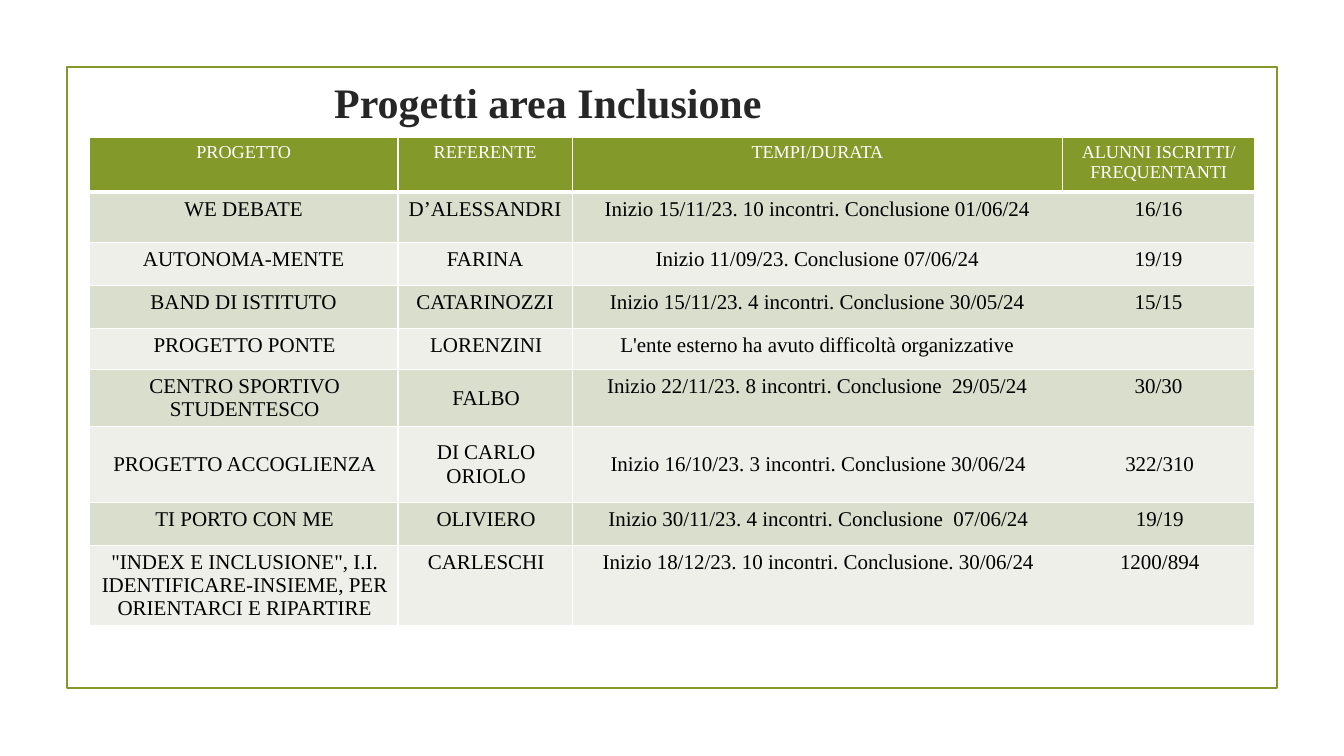
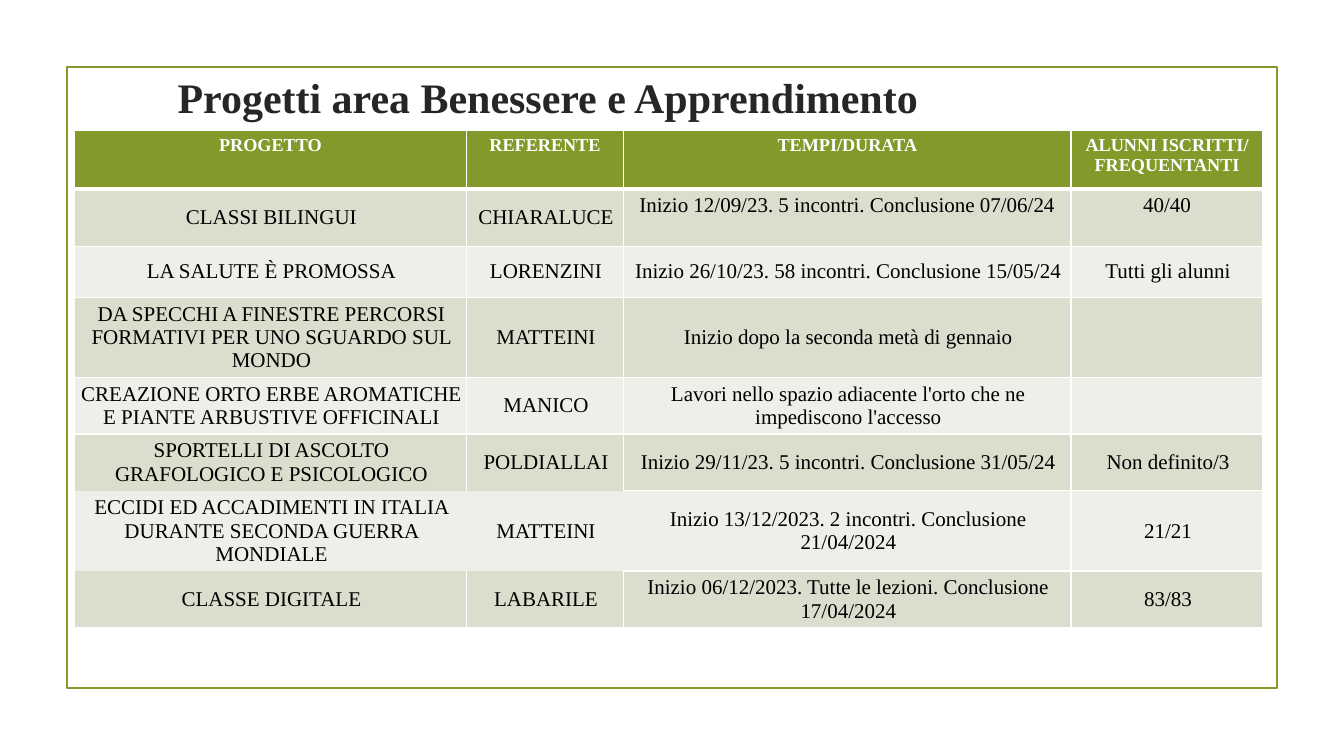
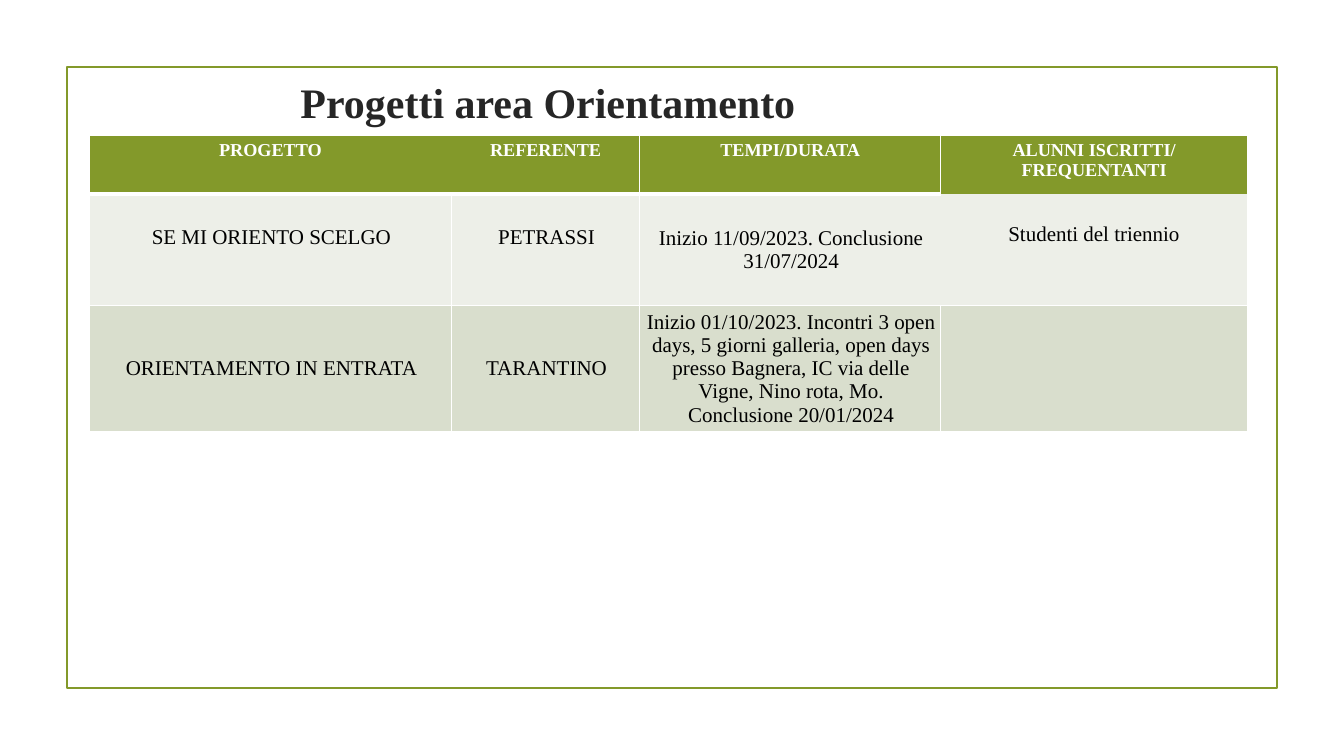
import pptx
import pptx.dml.color
import pptx.enum.shapes
import pptx.enum.text
import pptx.oxml
import pptx.oxml.ns
import pptx.util

GREEN, SAGE, MIST = "83992A", "D9DECD", "EDEFE8"
WHITE, BLACK, INK = "FFFFFF", "000000", "262626"
FONT = "Times New Roman"
HEADER = ["PROGETTO", "REFERENTE", "TEMPI/DURATA", "ALUNNI ISCRITTI/\nFREQUENTANTI"]
MIDDLE = pptx.enum.text.MSO_ANCHOR.MIDDLE
TOP = pptx.enum.text.MSO_ANCHOR.TOP
CELL_STYLES = {"w": (TOP, 10, 10), "t": (TOP, 4, 2), "m": (MIDDLE, 4, 2)}


def px(n):
    return pptx.util.Emu(n * 9525)


def rgb(color):
    return pptx.dml.color.RGBColor.from_string(color)


class Deck:
    """Holds the shared style and the current slide."""

    def __init__(self):
        self.prs = pptx.Presentation()
        self.prs.slide_width, self.prs.slide_height = px(1280), px(720)
        self.s = None

    def slide(self, title, height):
        self.s = self.prs.slides.add_slide(self.prs.slide_layouts[5])
        self.frame()
        self.title(title, height)

    def frame(self):
        shape = pptx.enum.shapes.MSO_SHAPE.RECTANGLE
        sp = self.s.shapes.add_shape(shape, px(64), px(64), px(1152), px(591))
        sp.shadow.inherit = False
        sp.fill.background()
        sp.line.color.rgb = rgb(GREEN)
        sp.line.width = pptx.util.Pt(1.25)

    def title(self, text, height):
        sp = self.s.shapes.title
        sp.left, sp.top, sp.width, sp.height = px(71), px(64), px(902), px(height)
        tf = sp.text_frame
        tf.text = text
        tf.word_wrap = True
        tf.auto_size = pptx.enum.text.MSO_AUTO_SIZE.NONE
        tf.vertical_anchor = MIDDLE
        self.format(tf, 30, INK, True)

    def format(self, tf, size, color, bold=False):
        for p in tf.paragraphs:
            p.alignment = pptx.enum.text.PP_ALIGN.CENTER
            for r in p.runs:
                r.font.name = FONT
                r.font.size = pptx.util.Pt(size)
                r.font.bold = bold
                r.font.color.rgb = rgb(color)

    def border(self, cell, side, width):
        paint = f'<a:solidFill><a:srgbClr val="{WHITE}"/></a:solidFill>' if width else "<a:noFill/>"
        ns = pptx.oxml.ns.nsdecls("a")
        xml = f'<a:ln{side} {ns} w="{pptx.util.Pt(width)}">{paint}</a:ln{side}>'
        cell._tc.get_or_add_tcPr().append(pptx.oxml.parse_xml(xml))

    def table(self, left, top, cols, heights, rows, styles, fills, bold=True,
              joined_right=(), joined_below=(), tops=None):
        rows = [HEADER] + rows
        styles = ["wwww"] + styles
        tops = tops or {}
        tbl = self.s.shapes.add_table(len(rows), len(cols), px(left), px(top),
                                      px(sum(cols)), px(sum(heights))).table
        tbl.first_row = tbl.horz_banding = False
        for col, width in zip(tbl.columns, cols):
            col.width = px(width)
        for i, (row, height) in enumerate(zip(tbl.rows, heights)):
            row.height = px(height)
            for j, cell in enumerate(row.cells):
                cell.text_frame.text = rows[i][j]
                cell.vertical_anchor, inset_left, inset_right = CELL_STYLES[styles[i][j]]
                cell.margin_left, cell.margin_right = px(inset_left), px(inset_right)
                cell.margin_top, cell.margin_bottom = px(tops.get((i, j), 5)), px(5)
                self.border(cell, "L", 0 if (i, j - 1) in joined_right else 0.96)
                self.border(cell, "R", 0 if (i, j) in joined_right else 0.96)
                self.border(cell, "T", 0 if (i - 1, j) in joined_below else 3 if i == 1 else 0.96)
                self.border(cell, "B", 0 if (i, j) in joined_below else 3 if i == 0 else 0.96)
                cell.fill.solid()
                cell.fill.fore_color.rgb = rgb(fills[(i - 1) % 2] if i else GREEN)
                if i:
                    self.format(cell.text_frame, 15, BLACK)
                else:
                    self.format(cell.text_frame, 13, WHITE, bold)


def main():
    deck = Deck()

    deck.slide("Progetti area Inclusione", 66)
    deck.table(
        85, 131, [294, 166, 467, 183], [52, 48, 41, 41, 36, 54, 72, 41, 75],
        [
            ["WE DEBATE", "D’ALESSANDRI", "Inizio 15/11/23. 10 incontri. Conclusione 01/06/24", "16/16"],
            ["AUTONOMA-MENTE", "FARINA", "Inizio 11/09/23. Conclusione 07/06/24", "19/19"],
            ["BAND DI ISTITUTO", "CATARINOZZI", "Inizio 15/11/23. 4 incontri. Conclusione 30/05/24", "15/15"],
            ["PROGETTO PONTE", "LORENZINI", "L'ente esterno ha avuto difficoltà organizzative", ""],
            ["CENTRO SPORTIVO STUDENTESCO", "FALBO",
             "Inizio 22/11/23. 8 incontri. Conclusione  29/05/24", "30/30"],
            ["PROGETTO ACCOGLIENZA", "DI CARLO\nORIOLO",
             "Inizio 16/10/23. 3 incontri. Conclusione 30/06/24", "322/310"],
            ["TI PORTO CON ME", "OLIVIERO", "Inizio 30/11/23. 4 incontri. Conclusione  07/06/24", "19/19"],
            ["\"INDEX E INCLUSIONE\", I.I. IDENTIFICARE-INSIEME, PER ORIENTARCI E RIPARTIRE", "CARLESCHI",
             "Inizio 18/12/23. 10 incontri. Conclusione. 30/06/24", "1200/894"],
        ],
        ["wwww"] * 3 + ["ttww", "tmww", "mmmm", "tttt", "tttt"], (SAGE, MIST), bold=False,
        joined_right={(i, 2) for i in range(1, 9)})

    deck.slide("Progetti area Benessere e Apprendimento", 57)
    deck.table(
        71, 124, [373, 150, 426, 183], [56, 55, 48, 76, 53, 54, 76, 53],
        [
            ["CLASSI BILINGUI", "CHIARALUCE", "Inizio 12/09/23. 5 incontri. Conclusione 07/06/24", "40/40"],
            ["LA SALUTE È PROMOSSA", "LORENZINI",
             "Inizio 26/10/23. 58 incontri. Conclusione 15/05/24", "Tutti gli alunni"],
            ["DA SPECCHI A FINESTRE PERCORSI FORMATIVI PER UNO SGUARDO SUL MONDO", "MATTEINI",
             "Inizio dopo la seconda metà di gennaio", ""],
            ["CREAZIONE ORTO ERBE AROMATICHE E PIANTE ARBUSTIVE OFFICINALI", "MANICO",
             "Lavori nello spazio adiacente l'orto che ne impediscono l'accesso", ""],
            ["SPORTELLI DI ASCOLTO GRAFOLOGICO E PSICOLOGICO", "POLDIALLAI",
             "Inizio 29/11/23. 5 incontri. Conclusione 31/05/24", "Non definito/3"],
            ["ECCIDI ED ACCADIMENTI IN ITALIA DURANTE SECONDA GUERRA MONDIALE", "MATTEINI",
             "Inizio 13/12/2023. 2 incontri. Conclusione 21/04/2024", "21/21"],
            ["CLASSE DIGITALE", "LABARILE",
             "Inizio 06/12/2023. Tutte le lezioni. Conclusione 17/04/2024", "83/83"],
        ],
        ["mmww"] + ["mmmm"] * 6, (SAGE, MIST),
        joined_right={(6, 0), (6, 1)}, joined_below={(5, 0), (5, 1), (6, 0), (6, 1)})

    deck.slide("Progetti area Orientamento", 66)
    deck.table(
        85, 129, [345, 179, 287, 292], [56, 106, 120],
        [
            ["SE MI ORIENTO SCELGO", "PETRASSI",
             "Inizio 11/09/2023. Conclusione 31/07/2024", "Studenti del triennio"],
            ["ORIENTAMENTO IN ENTRATA", "TARANTINO",
             "Inizio 01/10/2023. Incontri 3 open days, 5 giorni galleria, open days presso Bagnera, "
             "IC via delle Vigne, Nino rota, Mo. Conclusione 20/01/2024", ""],
        ],
        ["ttmw", "mmmm"], (MIST, SAGE),
        joined_right={(0, 0), (1, 2)}, joined_below={(0, 3)},
        tops={(1, 0): 30, (1, 1): 30, (1, 3): 27})

    deck.prs.save("out.pptx")


if __name__ == "__main__":
    main()
